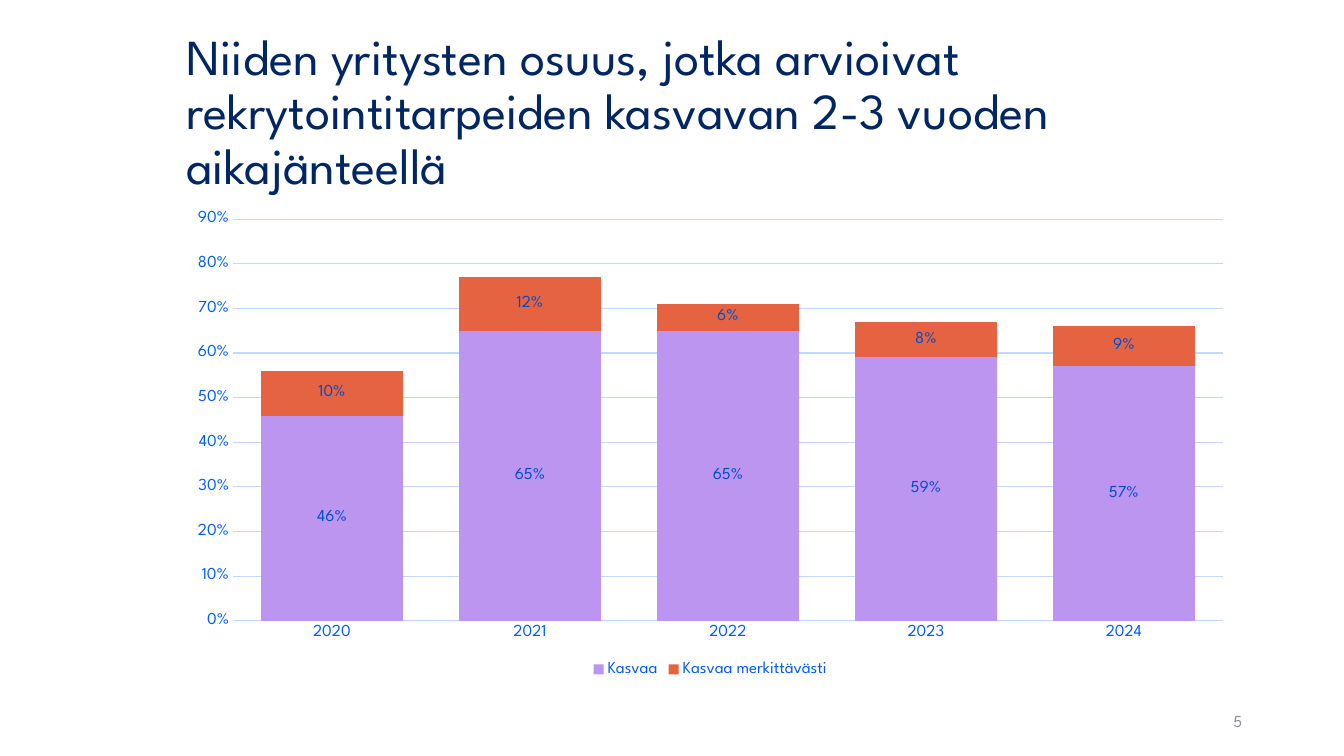
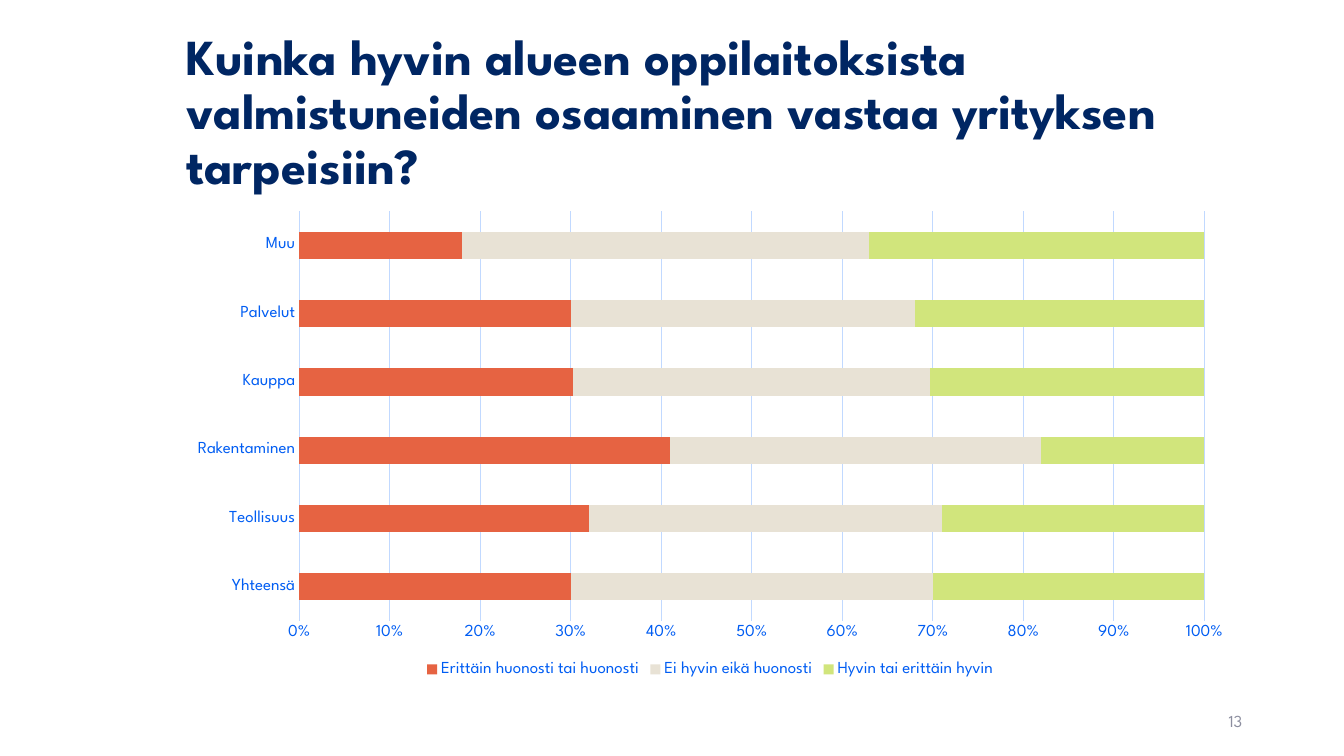
from pptx import Presentation
from pptx.chart.data import CategoryChartData
from pptx.dml.color import RGBColor
from pptx.enum.chart import XL_CHART_TYPE, XL_LEGEND_POSITION, XL_TICK_MARK
from pptx.enum.text import MSO_ANCHOR, PP_ALIGN
from pptx.util import Inches, Pt

FONT = "League Spartan"
NAVY = RGBColor(0x00, 0x26, 0x63)
BLUE = RGBColor(0x00, 0x5D, 0xF3)
LABEL_BLUE = RGBColor(0x00, 0x4D, 0xCA)
PALE_BLUE = RGBColor(0xC1, 0xD9, 0xFF)
GRAY = RGBColor(0x8C, 0x8E, 0x9F)
PURPLE = RGBColor(0xBB, 0x95, 0xEF)
ORANGE = RGBColor(0xE6, 0x63, 0x42)
BEIGE = RGBColor(0xE8, 0xE2, 0xD5)
LIME = RGBColor(0xD1, 0xE5, 0x7C)


def set_font(font, size=12, color=BLUE, bold=False):
    """Apply the deck's typeface to a font."""
    font.name = FONT
    font.size = Pt(size)
    font.bold = bold
    font.color.rgb = color


def add_text(slide, text, left, top, width, height, align=PP_ALIGN.LEFT, spacing=1.0, **style):
    """Add a wrapped, vertically centred text box."""
    sp = slide.shapes.add_textbox(Inches(left), Inches(top), Inches(width), Inches(height))
    tf = sp.text_frame
    tf.word_wrap = True
    tf.vertical_anchor = MSO_ANCHOR.MIDDLE
    p = tf.paragraphs[0]
    p.alignment = align
    p.line_spacing = spacing
    r = p.add_run()
    r.text = text
    set_font(r.font, **style)


class Deck:
    """Hold the presentation, its shared style and the current slide."""

    LEFT, WIDTH = 1.75, 10.59

    def __init__(self):
        """Start an empty widescreen presentation."""
        self.prs = Presentation()
        self.prs.slide_width = Inches(13.33)
        self.prs.slide_height = Inches(7.5)
        self.s = None

    def slide(self, title, number, bold=False):
        """Add a slide with its title and page number."""
        self.s = self.prs.slides.add_slide(self.prs.slide_layouts[6])
        add_text(self.s, title, self.LEFT, 0.4, self.WIDTH, 1.45,
                 spacing=0.9, size=36, color=NAVY, bold=bold)
        add_text(self.s, str(number), 9.42, 6.95, 3, 0.4, align=PP_ALIGN.RIGHT, color=GRAY)

    def chart(self, kind, categories, series, number_format, gap, maximum, labels=False):
        """Add a stacked chart from (name, values, color) series."""
        data = CategoryChartData(number_format=number_format)
        data.categories = categories
        for name, values, _ in series:
            data.add_series(name, values)
        chart = self.s.shapes.add_chart(kind, Inches(self.LEFT), Inches(2),
                                        Inches(self.WIDTH), Inches(4.76), data).chart
        set_font(chart.font, size=10, color=NAVY)
        chart.has_title = False
        chart.has_legend = True
        chart.legend.position = XL_LEGEND_POSITION.BOTTOM
        chart.legend.include_in_layout = False
        set_font(chart.legend.font)
        self.axes(chart, maximum)

        plot = chart.plots[0]
        plot.gap_width = gap
        plot.overlap = 100
        plot.vary_by_categories = False
        for ser, (_, _, color) in zip(plot.series, series):
            ser.format.fill.solid()
            ser.format.fill.fore_color.rgb = color
            ser.invert_if_negative = False
            if labels:
                dl = ser.data_labels
                dl.show_value = True
                dl.number_format = "0%"
                dl.number_format_is_linked = False
                set_font(dl.font, color=LABEL_BLUE)

    def axes(self, chart, maximum):
        """Style both axes and the value gridlines."""
        for axis in (chart.category_axis, chart.value_axis):
            axis.major_tick_mark = axis.minor_tick_mark = XL_TICK_MARK.NONE
            set_font(axis.tick_labels.font)
        value_axis = chart.value_axis
        value_axis.minimum_scale = 0
        value_axis.maximum_scale = maximum
        value_axis.major_unit = 0.1
        value_axis.tick_labels.number_format = "0%"
        value_axis.tick_labels.number_format_is_linked = False
        value_axis.format.line.fill.background()
        value_axis.has_major_gridlines = True
        for line in (chart.category_axis.format.line, value_axis.major_gridlines.format.line):
            line.color.rgb = PALE_BLUE
            line.width = Pt(0.75)


def main():
    """Build both slides and save them."""
    deck = Deck()

    deck.slide("Niiden yritysten osuus, jotka arvioivat rekrytointitarpeiden kasvavan "
               "2-3 vuoden aikajänteellä", 5)
    deck.chart(
        XL_CHART_TYPE.COLUMN_STACKED,
        ["2020", "2021", "2022", "2023", "2024"],
        [("Kasvaa", [0.46, 0.65, 0.65, 0.59, 0.57], PURPLE),
         ("Kasvaa merkittävästi", [0.1, 0.12, 0.06, 0.08, 0.09], ORANGE)],
        number_format="0%", gap=40, maximum=0.9, labels=True)

    deck.slide("Kuinka hyvin alueen oppilaitoksista valmistuneiden osaaminen vastaa "
               "yrityksen tarpeisiin?", 13, bold=True)
    deck.chart(
        XL_CHART_TYPE.BAR_STACKED_100,
        ["Yhteensä", "Teollisuus", "Rakentaminen", "Kauppa", "Palvelut", "Muu"],
        [("Erittäin huonosti tai huonosti", [30, 32, 41, 30, 30, 18], ORANGE),
         ("Ei hyvin eikä huonosti", [40, 39, 41, 39, 38, 45], BEIGE),
         ("Hyvin tai erittäin hyvin", [30, 29, 18, 30, 32, 37], LIME)],
        number_format="0", gap=150, maximum=1)

    deck.prs.save("out.pptx")


if __name__ == "__main__":
    main()
